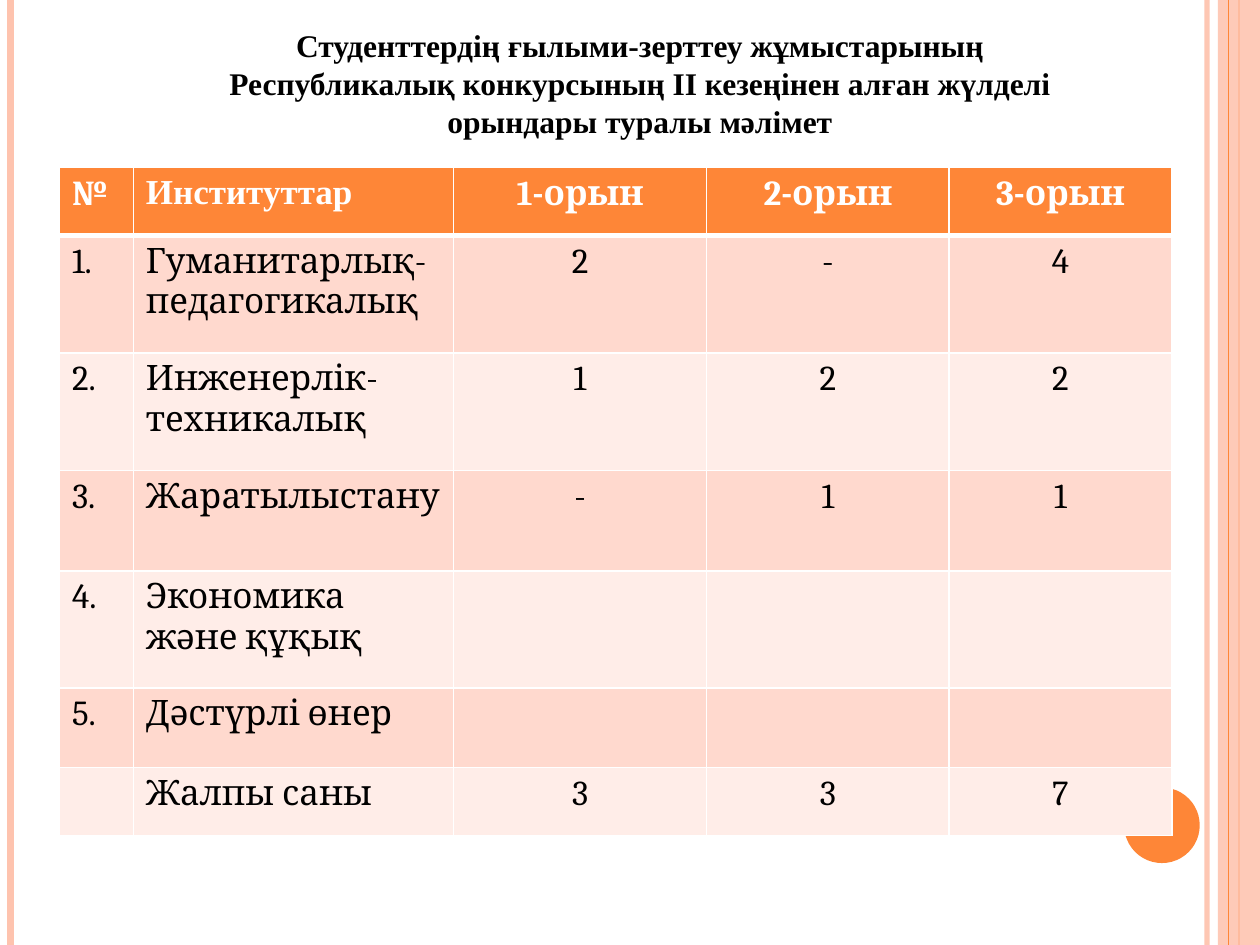
from lxml import etree
from pptx import Presentation
from pptx import util as u
from pptx.dml.color import RGBColor
from pptx.enum import shapes, text
from pptx.oxml import ns

Pt = u.Pt
ORANGE, PEACH, WHITE, BLACK = "FE8637", "FEC3AE", "FFFFFF", "000000"
BANDS = ("FFD9CE", "FFEDE8")
WIDTH, HEIGHT = 720, 540


def rgb(value):
    return RGBColor.from_string(value)


def sub(parent, tag, **attrs):
    return etree.SubElement(parent, ns.qn(tag), attrs)


class Deck:
    serif, title_font = "Cambria", "Times New Roman"
    title_size, cell_size = 18, 20

    def __init__(self, prs):
        self.s = prs.slides.add_slide(prs.slide_layouts[6])

    def set_alpha(self, fill_parent, percent):
        color = fill_parent.find(".//" + ns.qn("a:srgbClr"))
        sub(color, "a:alpha", val=str(percent * 1000))

    def stripe(self, x, color, weight, alpha=None):
        line = self.s.shapes.add_connector(
            shapes.MSO_CONNECTOR.STRAIGHT, Pt(x), 0, Pt(x), Pt(HEIGHT))
        line.line.color.rgb = rgb(color)
        line.line.width = Pt(weight)
        if alpha:
            self.set_alpha(line._element.spPr, alpha)
        sub(line._element.spPr, "a:effectLst")

    def shape(self, kind, x, y, w, h, color, alpha=None):
        sp = self.s.shapes.add_shape(kind, Pt(x), Pt(y), Pt(w), Pt(h))
        sp.shadow.inherit = False
        sp.fill.solid()
        sp.fill.fore_color.rgb = rgb(color)
        sp.line.fill.background()
        if alpha:
            self.set_alpha(sp._element.spPr, alpha)

    def put_text(self, tf, content, font, size, color, bold, centred):
        p = tf.paragraphs[0]
        p.text = content
        p.alignment = text.PP_ALIGN.CENTER if centred else text.PP_ALIGN.LEFT
        p.font.name, p.font.size, p.font.bold = font, Pt(size), bold
        p.font.color.rgb = rgb(color)

    def title(self, content, x, y, w, h):
        tf = self.s.shapes.add_textbox(Pt(x), Pt(y), Pt(w), Pt(h)).text_frame
        tf.word_wrap = True
        self.put_text(tf, content, self.title_font, self.title_size, BLACK, True, True)

    def border(self, cell, bottom):
        tcPr = cell._tc.get_or_add_tcPr()
        for side in "LRTB":
            weight = bottom if side == "B" else 1
            ln = sub(tcPr, "a:ln" + side, w=str(Pt(weight)))
            sub(sub(ln, "a:solidFill"), "a:srgbClr", val=WHITE)

    def table(self, rows, x, y, widths, heights):
        table = self.s.shapes.add_table(
            len(rows), len(widths), Pt(x), Pt(y),
            Pt(sum(widths)), Pt(sum(heights))).table
        for col, w in zip(table.columns, widths):
            col.width = Pt(w)
        for i, (row, h) in enumerate(zip(rows, heights)):
            table.rows[i].height = Pt(h)
            head = i == 0
            for j, content in enumerate(row):
                cell = table.cell(i, j)
                self.border(cell, 3 if head else 1)
                cell.fill.solid()
                cell.fill.fore_color.rgb = rgb(ORANGE if head else BANDS[(i - 1) % 2])
                if content:
                    font = self.title_font if head and j == 1 else self.serif
                    self.put_text(cell.text_frame, content, font, self.cell_size,
                                  WHITE if head else BLACK, head, j > 1)


def main():
    prs = Presentation()
    prs.slide_width, prs.slide_height = Pt(WIDTH), Pt(HEIGHT)
    deck = Deck(prs)

    # Side stripes and corner disc
    deck.stripe(689.8, PEACH, 3, 93)
    deck.stripe(6, PEACH, 4.5)
    deck.stripe(708, ORANGE, 1.5)
    deck.shape(shapes.MSO_SHAPE.RECTANGLE, 696, 0, 24, HEIGHT, PEACH, 87)
    deck.stripe(702, ORANGE, 0.75)
    deck.shape(shapes.MSO_SHAPE.OVAL, 642.4, 450, 43.2, 43.2, ORANGE)

    # Prize places by institute
    rows = [
        ("№", "Институттар", "1-орын", "2-орын", "3-орын"),
        ("1.", "Гуманитарлық-педагогикалық", "2", "-", "4"),
        ("2.", "Инженерлік-техникалық", "1", "2", "2"),
        ("3.", "Жаратылыстану", "-", "1", "1"),
        ("4.", "Экономика және құқық", "", "", ""),
        ("5.", "Дәстүрлі өнер", "", "", ""),
        ("", "Жалпы саны", "3", "3", "7"),
    ]
    deck.table(rows, 34, 95.6, (42.2, 183, 144.7, 138.5, 127.4),
               (38.9, 67.3, 67, 57.5, 67, 45.4, 38.9))

    # Title
    deck.title("Студенттердің ғылыми-зерттеу жұмыстарының Республикалық "
               "конкурсының ІІ кезеңінен алған жүлделі орындары туралы мәлімет",
               123.8, 11.5, 483.8, 72.7)

    prs.save("out.pptx")


if __name__ == "__main__":
    main()
